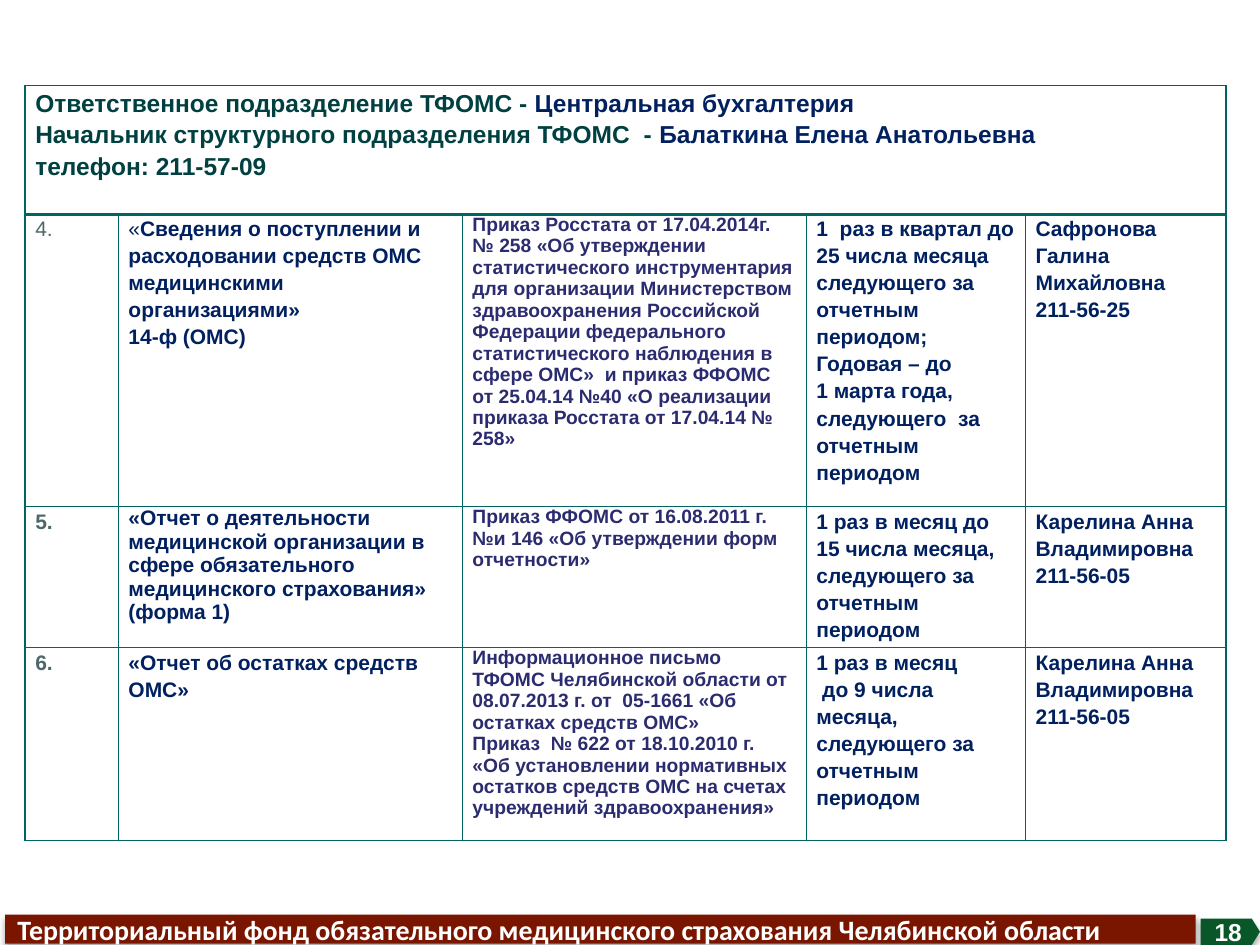
from dataclasses import dataclass

from lxml import etree
from pptx import Presentation
from pptx.dml.color import RGBColor
from pptx.enum.shapes import MSO_SHAPE
from pptx.enum.text import MSO_ANCHOR, PP_ALIGN
from pptx.oxml import parse_xml
from pptx.oxml.ns import nsdecls, qn
from pptx.util import Inches, Pt


@dataclass(frozen=True)
class Theme:
    font: str = "Arial"
    footer_font: str = "Calibri"
    label: str = "004040"
    navy: str = "002060"
    order: str = "2B2C6F"
    number: str = "4D6868"
    border: str = "006462"
    footer: str = "7A1600"
    badge: str = "095729"
    white: str = "FFFFFF"
    heading_size: int = 14
    cell_size: int = 12
    order_size: int = 11
    footer_size: int = 16


theme = Theme()


def add_text(para, text, *, size=theme.cell_size, color=theme.navy, bold=True,
             font=theme.font, spacing=None, align=None):
    span = para.add_run()
    span.text = text
    span.font.size = Pt(size)
    span.font.name = font
    span.font.bold = bold
    span.font.color.rgb = RGBColor.from_string(color)
    if spacing:
        para.line_spacing = spacing
    if align is not None:
        para.alignment = align


def format_cell(cell, bottom=1, top=1):
    cell.margin_left = cell.margin_right = Inches(0.08)
    cell.margin_top = cell.margin_bottom = 0
    cell.fill.background()
    properties = cell._tc.get_or_add_tcPr()
    widths = {"lnL": 1, "lnR": 1, "lnT": top, "lnB": bottom}
    for position, (side, width) in enumerate(widths.items()):
        line = etree.Element(qn(f"a:{side}"), w=str(Pt(width)))
        fill = etree.SubElement(line, qn("a:solidFill"))
        etree.SubElement(fill, qn("a:srgbClr"), val=theme.border)
        properties.insert(position, line)


deck = Presentation()
deck.slide_width, deck.slide_height = Inches(10), Inches(7.5)
page = deck.slides.add_slide(deck.slide_layouts[6])

# Content: the heading spans the table; each report is a list of cell paragraphs
heading = [
    ("Ответственное подразделение ТФОМС - ", "Центральная бухгалтерия"),
    ("Начальник структурного подразделения ТФОМС  - ", "Балаткина Елена Анатольевна"),
    ("телефон: 211-57-09", ""),
]
reports = [
    [
        ["4."],
        ["«Сведения о поступлении и расходовании средств ОМС медицинскими организациями»",
         "14-ф (ОМС)"],
        ["Приказ Росстата от 17.04.2014г. № 258 «Об утверждении статистического "
         "инструментария для организации Министерством здравоохранения Российской "
         "Федерации федерального статистического наблюдения в сфере ОМС»  и приказ "
         "ФФОМС от 25.04.14 №40 «О реализации приказа Росстата от 17.04.14 № 258»"],
        ["1  раз в квартал до 25 числа месяца следующего за отчетным периодом;",
         "Годовая – до", "1 марта года, следующего  за отчетным периодом"],
        ["Сафронова", "Галина", "Михайловна", "211-56-25"],
    ],
    [
        ["5."],
        ["«Отчет о деятельности медицинской организации в сфере обязательного "
         "медицинского страхования»  (форма 1)"],
        ["Приказ ФФОМС от 16.08.2011 г. №и 146 «Об утверждении форм отчетности»"],
        ["1 раз в месяц до 15 числа месяца, следующего за отчетным периодом"],
        ["Карелина Анна Владимировна", "211-56-05"],
    ],
    [
        ["6."],
        ["«Отчет об остатках средств ОМС»"],
        ["Информационное письмо ТФОМС Челябинской области от 08.07.2013 г. "
         "от  05-1661 «Об остатках средств ОМС»",
         "Приказ  № 622 от 18.10.2010 г. «Об установлении нормативных остатков "
         "средств ОМС на счетах учреждений здравоохранения»"],
        ["1 раз в месяц", " до 9 числа месяца, следующего за отчетным периодом"],
        ["Карелина Анна Владимировна", "211-56-05"],
    ],
]

# Table grid
column_widths = [0.74, 2.73, 2.73, 1.74, 1.59]
row_heights = [1.02, 2.32, 1.12, 1.53]
table = page.shapes.add_table(
    len(row_heights), len(column_widths), Inches(0.2), Inches(0.68),
    Inches(sum(column_widths)), Inches(sum(row_heights))).table
table.first_row = table.horz_banding = False
for column, width in zip(table.columns, column_widths):
    column.width = Inches(width)
for row, height in zip(table.rows, row_heights):
    row.height = Inches(height)

# Heading row
for cell in table.rows[0].cells:
    format_cell(cell, bottom=2)
table.cell(0, 0).merge(table.cell(0, len(column_widths) - 1))
frame = table.cell(0, 0).text_frame
for index, (label, value) in enumerate(heading):
    para = frame.paragraphs[0] if index == 0 else frame.add_paragraph()
    add_text(para, label, size=theme.heading_size, color=theme.label, spacing=1.15)
    if value:
        add_text(para, value, size=theme.heading_size)

# Report rows
column_formats = [{"color": theme.number}, {},
                  {"color": theme.order, "size": theme.order_size}, {}, {}]
for row_index, report in enumerate(reports, start=1):
    for column_index, lines in enumerate(report):
        cell = table.cell(row_index, column_index)
        format_cell(cell, top=2 if row_index == 1 else 1)
        single = column_index == 2 or (row_index, column_index) == (2, 1)
        for index, line in enumerate(lines):
            para = cell.text_frame.paragraphs[0] if index == 0 else cell.text_frame.add_paragraph()
            add_text(para, line, spacing=None if single else 1.15,
                     **column_formats[column_index])

# The first report has a regular number and a regular opening quote
table.cell(1, 0).text_frame.paragraphs[0].runs[0].font.bold = False
para = table.cell(1, 1).text_frame.paragraphs[0]
title = para.runs[0].text
para.runs[0].text = title[0]
para.runs[0].font.bold = False
add_text(para, title[1:])

# Footer bar and page number badge
footer_parts = [
    (MSO_SHAPE.RECTANGLE, (0.04, 7.26, 9.45, 0.23), theme.footer,
     "Территориальный фонд обязательного медицинского страхования Челябинской области",
     {"size": theme.footer_size, "font": theme.footer_font, "align": PP_ALIGN.LEFT}),
    (MSO_SHAPE.PENTAGON, (9.53, 7.29, 0.47, 0.21), theme.badge, "18",
     {"size": theme.heading_size, "align": PP_ALIGN.CENTER}),
]
for kind, bounds, color, text, text_format in footer_parts:
    box = page.shapes.add_shape(kind, *map(Inches, bounds))
    if kind == MSO_SHAPE.PENTAGON:
        box.adjustments[0] = 0.31
    box.fill.solid()
    box.fill.fore_color.rgb = RGBColor.from_string(color)
    box.line.fill.background()
    box.shadow.inherit = False
    box._element.spPr.find(qn("a:effectLst")).append(parse_xml(
        f'<a:outerShdw {nsdecls("a")} blurRad="{Pt(3.5)}" dist="{Pt(2.2)}" dir="5400000" '
        'rotWithShape="0"><a:srgbClr val="000000"><a:alpha val="32000"/></a:srgbClr>'
        '</a:outerShdw>'))
    box.text_frame.word_wrap = True
    box.text_frame.vertical_anchor = MSO_ANCHOR.MIDDLE
    add_text(box.text_frame.paragraphs[0], text, color=theme.white, **text_format)

deck.save("out.pptx")
